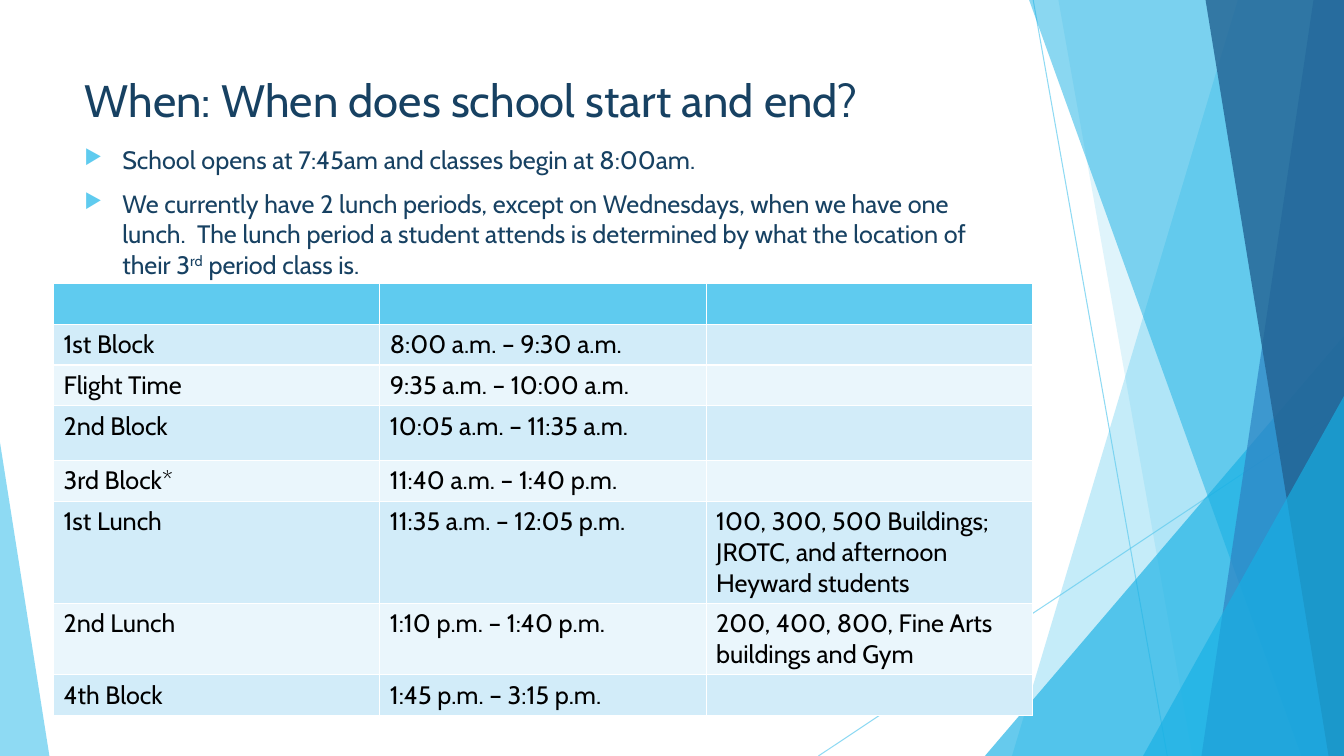
import dataclasses

import pptx
import pptx.dml.color
import pptx.enum.shapes
import pptx.enum.text
import pptx.oxml.ns
import pptx.oxml.xmlchemy
import pptx.util

Pt = pptx.util.Pt
qn = pptx.oxml.ns.qn


@dataclasses.dataclass(frozen=True)
class Theme:
    font: str = "Cabin"
    title_size: float = 32.4
    text_size: float = 18
    ink: str = "174162"
    black: str = "000000"
    sky: str = "5FCBEF"
    cyan: str = "17B0E4"
    blue: str = "2E83C3"
    navy: str = "226292"
    bands: tuple = ("D2ECF9", "EAF6FC")


THEME = Theme()
WIDTH, HEIGHT = 960, 540

# Facets run to the right edge: top x, bottom x, colour, opacity
# Triangles: left, top, width, height, apex position, colour, opacity
DECORATION = [
    ("facet", 884.2, 722.9, THEME.sky, 36),
    ("facet", 756, 851.8, THEME.sky, 20),
    ("triangle", 703.5, 239.8, 256.5, 300.2, 1, THEME.cyan, 66),
    ("facet", 735.1, 929.5, THEME.cyan, 50),
    ("facet", 938.2, 858.2, THEME.blue, 70),
    ("facet", 861.1, 949, THEME.navy, 80),
    ("triangle", 816.5, 283, 143.5, 257, 1, THEME.cyan, 66),
    ("triangle", 0, 316.1, 35.3, 223.9, 0, THEME.sky, 70),
]
LINES = [(738, 0, 833.8, HEIGHT), (WIDTH, 290.2, 584.6, HEIGHT)]

# Each bullet is a list of (text, is superscript)
BULLETS = [
    [("School opens at 7:45am and classes begin at 8:00am.", False)],
    [("We currently have 2 lunch periods, except on Wednesdays, when we have one "
      "lunch.  The lunch period a student attends is determined by what the "
      "location of their 3", False),
     ("rd", True),
     (" period class is.", False)],
]

# Row height and cell texts
SCHEDULE = [
    (29, "", "", ""),
    (29.2, "1st Block", "8:00 a.m. – 9:30 a.m.", ""),
    (29.2, "Flight Time", "9:35 a.m. – 10:00 a.m.", ""),
    (39, "2nd Block", "10:05 a.m. – 11:35 a.m.", ""),
    (29.2, "3rd Block*", "11:40 a.m. – 1:40 p.m.", ""),
    (73, "1st Lunch", "11:35 a.m. – 12:05 p.m.",
     "100, 300, 500 Buildings; JROTC, and afternoon Heyward students"),
    (51, "2nd Lunch", "1:10 p.m. – 1:40 p.m.",
     "200, 400, 800, Fine Arts buildings and Gym"),
    (29.2, "4th Block", "1:45 p.m. – 3:15 p.m.", ""),
]


def rgb(color):
    return pptx.dml.color.RGBColor.from_string(color)


def add_child(parent, tag, **attributes):
    child = pptx.oxml.xmlchemy.OxmlElement(tag)
    for name, value in attributes.items():
        child.set(name, str(value))
    parent.append(child)
    return child


def set_opacity(element, percent):
    color = next(element.iter(qn("a:srgbClr")))
    add_child(color, "a:alpha", val=percent * 1000)


def style_run(run, size, color):
    run.font.name = THEME.font
    run.font.size = Pt(size)
    run.font.color.rgb = rgb(color)


def paint(shape, color, opacity):
    shape.shadow.inherit = False
    shape.line.fill.background()
    shape.fill.solid()
    shape.fill.fore_color.rgb = rgb(color)
    set_opacity(shape._element.spPr, opacity)


def add_facet(slide, top_x, bottom_x, color, opacity):
    builder = slide.shapes.build_freeform(Pt(top_x), 0)
    builder.add_line_segments(
        [(Pt(WIDTH), 0), (Pt(WIDTH), Pt(HEIGHT)), (Pt(bottom_x), Pt(HEIGHT))])
    paint(builder.convert_to_shape(), color, opacity)


def add_triangle(slide, left, top, width, height, apex, color, opacity):
    shape = slide.shapes.add_shape(
        pptx.enum.shapes.MSO_SHAPE.ISOSCELES_TRIANGLE,
        Pt(left), Pt(top), Pt(width), Pt(height))
    shape.adjustments[0] = apex
    paint(shape, color, opacity)


def add_line(slide, *ends):
    line = slide.shapes.add_connector(
        pptx.enum.shapes.MSO_CONNECTOR.STRAIGHT, *map(Pt, ends))
    line.line.width = Pt(0.75)
    line.line.color.rgb = rgb(THEME.sky)
    set_opacity(line._element.spPr, 70)
    add_child(line._element.spPr, "a:effectLst")


def set_title(slide, text):
    title = slide.shapes.title
    title.left, title.top, title.width, title.height = map(Pt, (53.3, 48.2, 676.8, 51.8))
    frame = title.text_frame
    frame.text = text
    frame.word_wrap = True
    frame.auto_size = pptx.enum.text.MSO_AUTO_SIZE.NONE
    frame.vertical_anchor = pptx.enum.text.MSO_ANCHOR.TOP
    paragraph = frame.paragraphs[0]
    paragraph.alignment = pptx.enum.text.PP_ALIGN.LEFT
    style_run(paragraph.runs[0], THEME.title_size, THEME.ink)


def add_bullets(slide, bullets):
    frame = slide.shapes.add_textbox(*map(Pt, (53.3, 99.4, 662.4, 111.6))).text_frame
    frame.word_wrap = True
    for index, pieces in enumerate(bullets):
        paragraph = frame.add_paragraph() if index else frame.paragraphs[0]
        properties = paragraph._p.get_or_add_pPr()
        properties.set("marL", str(Pt(27)))
        properties.set("indent", str(Pt(-27)))
        color = add_child(properties, "a:buClr")
        add_child(color, "a:srgbClr", val=THEME.sky)
        add_child(properties, "a:buSzPct", val=80000)
        add_child(properties, "a:buChar", char="▶")
        paragraph.space_before = Pt(10 if index else 0)
        for text, superscript in pieces:
            run = paragraph.add_run()
            run.text = text
            style_run(run, THEME.text_size, THEME.ink)
            if superscript:
                run._r.get_or_add_rPr().set("baseline", "30000")


def add_schedule(slide, schedule):
    columns = len(schedule[0]) - 1
    total = sum(row[0] for row in schedule)
    # The default table style supplies the white rules
    table = slide.shapes.add_table(
        len(schedule), columns, Pt(38.2), Pt(202.5), Pt(699.3), Pt(total)).table
    for row_index, (height, *texts) in enumerate(schedule):
        table.rows[row_index].height = Pt(height)
        fill = THEME.bands[(row_index - 1) % 2] if row_index else THEME.sky
        for column_index, text in enumerate(texts):
            cell = table.cell(row_index, column_index)
            cell.fill.solid()
            cell.fill.fore_color.rgb = rgb(fill)
            cell.text_frame.text = text
            for run in cell.text_frame.paragraphs[0].runs:
                style_run(run, THEME.text_size, THEME.black)


def main():
    presentation = pptx.Presentation()
    presentation.slide_width, presentation.slide_height = Pt(WIDTH), Pt(HEIGHT)
    slide = presentation.slides.add_slide(presentation.slide_layouts[5])

    # Background decoration
    for ends in LINES:
        add_line(slide, *ends)
    draw = {"facet": add_facet, "triangle": add_triangle}
    for kind, *values in DECORATION:
        draw[kind](slide, *values)

    # Content
    set_title(slide, "When: When does school start and end?")
    add_bullets(slide, BULLETS)
    add_schedule(slide, SCHEDULE)
    presentation.save("out.pptx")


if __name__ == "__main__":
    main()
